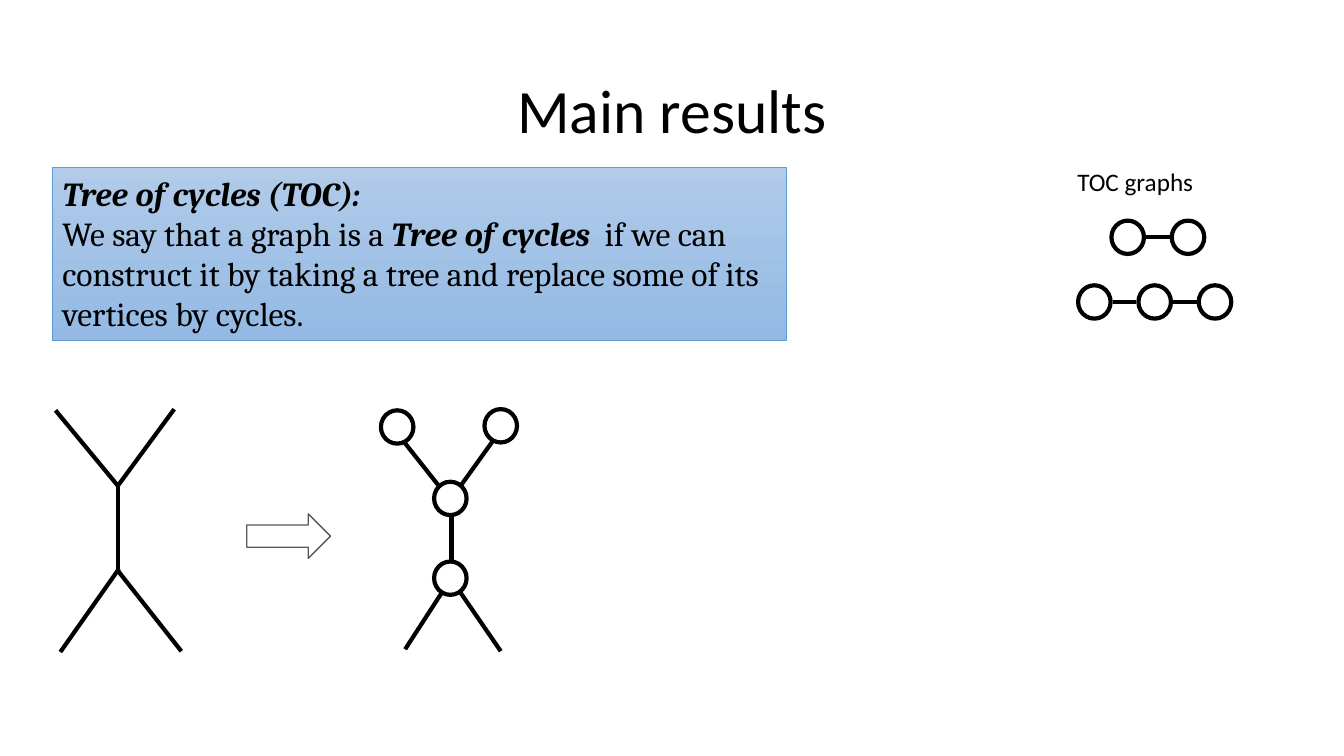
"""Build the "Main results" slide on trees of cycles."""
from pptx import Presentation
from pptx.dml.color import RGBColor
from pptx.enum.shapes import MSO_CONNECTOR as CONN, MSO_SHAPE as SHAPE
from pptx.enum.text import MSO_ANCHOR as ANCHOR, MSO_AUTO_SIZE as AUTO, PP_ALIGN as ALIGN
from pptx.oxml.xmlchemy import OxmlElement
from pptx.util import Cm, Pt

BLACK = RGBColor(0x00, 0x00, 0x00)
WHITE = RGBColor(0xFF, 0xFF, 0xFF)
GREY = RGBColor(0x59, 0x59, 0x59)
BLUE = RGBColor(0x5B, 0x9B, 0xD5)
BLUE_TOP = RGBColor(0xB1, 0xCB, 0xE9)
BLUE_BOTTOM = RGBColor(0x93, 0xB9, 0xE4)

TITLE = [[("Main results", False)]]
LABEL = [[("TOC graphs", False)]]
DEFINITION = [
    [("Tree of cycles (TOC):", True)],
    [
        ("We say that a graph is a ", False),
        ("Tree of cycles  ", True),
        ("if we can construct it by taking a tree and replace some of its "
         "vertices by cycles.", False),
    ],
]

CYCLE_W, CYCLE_H = 0.82, 0.84
CHAIN_PITCH, EDGE_GAP = 1.52, 0.46
CHAINS = [(28.42, 5.98, 2), (27.58, 7.61, 3)]

TREE_EDGES = [
    (1.4, 10.34, 2.97, 12.24),
    (4.39, 10.31, 2.97, 12.24),
    (2.97, 12.14, 2.97, 14.4),
    (2.97, 14.38, 4.57, 16.41),
    (3.0, 14.33, 1.52, 16.43),
]
TOC_EDGES = [
    (10.13, 11.07, 11.2, 12.42),
    (12.45, 11.07, 11.48, 12.42),
    (11.38, 12.98, 11.38, 14.58),
    (11.61, 14.94, 12.62, 16.41),
    (11.15, 14.91, 10.21, 16.36),
]
TOC_CYCLES = [(11.35, 12.56), (12.62, 10.73), (10.01, 10.76), (11.35, 14.57)]


def write(sp, paragraphs, font, size, align=ALIGN.LEFT, spacing=1.0):
    tf = sp.text_frame
    for i, runs in enumerate(paragraphs):
        p = tf.add_paragraph() if i else tf.paragraphs[0]
        p.alignment = align
        p.line_spacing = spacing
        for text, strong in runs:
            r = p.add_run()
            r.text = text
            r.font.name, r.font.size = font, Pt(size)
            r.font.bold = r.font.italic = strong
            r.font.color.rgb = BLACK
    return tf


def add_shape(shapes, kind, x, y, w, h, color, width):
    sp = shapes.add_shape(kind, Cm(x), Cm(y), Cm(w), Cm(h))
    sp.shadow.inherit = False
    sp.line.color.rgb = color
    sp.line.width = Pt(width)
    return sp


def add_cycle(shapes, cx, cy):
    sp = add_shape(shapes, SHAPE.OVAL, cx - CYCLE_W / 2, cy - CYCLE_H / 2,
                   CYCLE_W, CYCLE_H, BLACK, 3)
    sp.fill.solid()
    sp.fill.fore_color.rgb = WHITE


def add_edge(shapes, x1, y1, x2, y2):
    edge = shapes.add_connector(CONN.STRAIGHT, Cm(x1), Cm(y1), Cm(x2), Cm(y2))
    edge.line.color.rgb = BLACK
    edge.line.width = Pt(3)
    edge._element.spPr.append(OxmlElement("a:effectLst"))


def add_graph(slide, edges, cycles):
    shapes = slide.shapes.add_group_shape().shapes
    for edge in edges:
        add_edge(shapes, *edge)
    for cycle in cycles:
        add_cycle(shapes, *cycle)
    return shapes


def main():
    prs = Presentation()
    prs.slide_width, prs.slide_height = Cm(33.87), Cm(19.05)
    s = prs.slides.add_slide(prs.slide_layouts[6])

    title = s.shapes.add_textbox(Cm(2.33), Cm(1.01), Cm(29.21), Cm(3.68))
    tf = write(title, TITLE, "Calibri", 44, ALIGN.CENTER, 0.9)
    tf.word_wrap = True
    tf.vertical_anchor = ANCHOR.MIDDLE

    chain_edges, chain_cycles = [], []
    for x, y, count in CHAINS:
        centres = [x + i * CHAIN_PITCH for i in range(count)]
        chain_cycles += [(cx, y) for cx in centres]
        chain_edges += [(a + EDGE_GAP, y, b - EDGE_GAP, y)
                        for a, b in zip(centres, centres[1:])]
    shapes = add_graph(s, chain_edges, chain_cycles)
    label = shapes.add_textbox(Cm(26.9), Cm(4.06), Cm(3.45), Cm(1.02))
    tf = write(label, LABEL, "Calibri", 18)
    tf.word_wrap = False
    tf.auto_size = AUTO.SHAPE_TO_FIT_TEXT

    arrow = add_shape(s.shapes, SHAPE.RIGHT_ARROW, 6.22, 12.95, 2.11, 1.12, GREY, 1)
    arrow.fill.background()
    add_graph(s, TREE_EDGES, [])
    add_graph(s, TOC_EDGES, TOC_CYCLES)

    box = add_shape(s.shapes, SHAPE.RECTANGLE, 1.32, 4.22, 18.49, 4.37, BLUE, 0.5)
    box.fill.gradient()
    box.fill.gradient_angle = 270
    for stop, color in zip(box.fill.gradient_stops, (BLUE_TOP, BLUE_BOTTOM)):
        stop.color.rgb = color
    tf = write(box, DEFINITION, "Cambria", 24)
    tf.word_wrap = True
    tf.vertical_anchor = ANCHOR.TOP
    tf.auto_size = AUTO.SHAPE_TO_FIT_TEXT

    prs.save("out.pptx")


if __name__ == "__main__":
    main()
